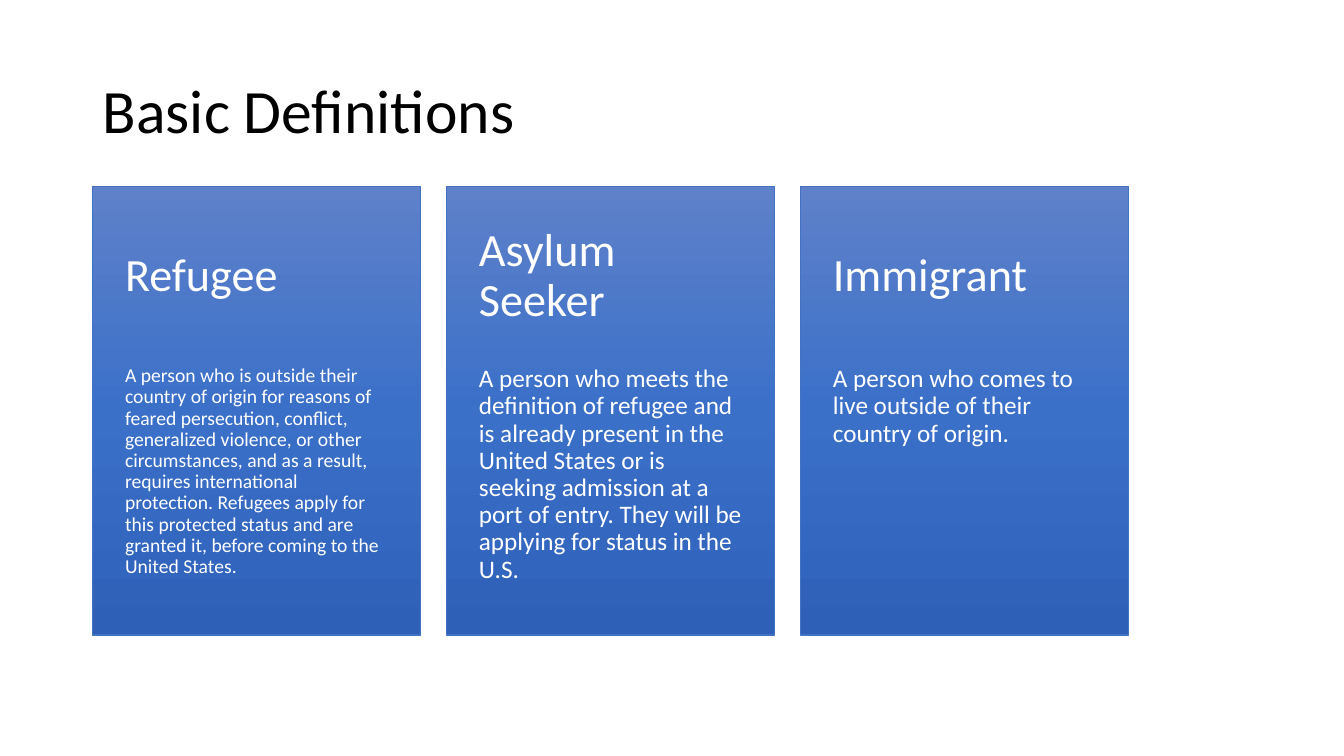
import copy

import pptx
import pptx.dml.color
import pptx.enum.shapes
import pptx.enum.text
import pptx.oxml.ns
import pptx.util

Inches = pptx.util.Inches
Anchor = pptx.enum.text.MSO_ANCHOR
RGB = pptx.dml.color.RGBColor.from_string

THEME = {
    "font": "Calibri",
    "ink": RGB("000000"),
    "card_text": RGB("FFFFFF"),
    "card_line": RGB("4372C3"),
    "card_gradient": [(0, RGB("5E81C9")), (0.5, RGB("3B70C9")), (1, RGB("2E60B8"))],
    "title_size": 44,
    "term_size": 33,
    "meaning_size": 18,
    "long_meaning_size": 14,
}


def write_text(frame, words, size, color, anchor, insets):
    left, top, right, bottom = map(Inches, insets)
    frame_format = {
        "word_wrap": True,
        "auto_size": pptx.enum.text.MSO_AUTO_SIZE.NONE,
        "vertical_anchor": anchor,
        "margin_left": left,
        "margin_top": top,
        "margin_right": right,
        "margin_bottom": bottom,
    }
    for name, value in frame_format.items():
        setattr(frame, name, value)
    frame.text = words
    paragraph = frame.paragraphs[0]
    paragraph.alignment = pptx.enum.text.PP_ALIGN.LEFT
    paragraph.line_spacing = 0.9
    font_format = {"name": THEME["font"], "size": pptx.util.Pt(THEME[size])}
    for name, value in font_format.items():
        setattr(paragraph.runs[0].font, name, value)
    paragraph.runs[0].font.color.rgb = THEME[color]


deck = pptx.Presentation()
deck.slide_width = Inches(13.33)
deck.slide_height = Inches(7.5)
slide = deck.slides.add_slide(deck.slide_layouts[5])

heading = slide.shapes.title
heading_place = {"left": 0.92, "top": 0.4, "width": 11.5, "height": 1.45}
for name, value in heading_place.items():
    setattr(heading, name, Inches(value))
write_text(heading.text_frame, "Basic Definitions", "title_size", "ink",
           Anchor.MIDDLE, (0.1, 0.05, 0.1, 0.05))

CARD_LEFT, CARD_TOP, CARD_WIDTH, CARD_HEIGHT = 0.92, 1.85, 3.25, 4.45
CARD_STEP = 3.51
TERM_HEIGHT = 1.78

definitions = [
    ("Refugee", 1,
     "A person who is outside their country of origin for reasons of feared "
     "persecution, conflict, generalized violence, or other circumstances, and "
     "as a result, requires international protection. Refugees apply for this "
     "protected status and are granted it, before coming to the United States.",
     "long_meaning_size"),
    ("Asylum Seeker", TERM_HEIGHT,
     "A person who meets the definition of refugee and is already present in the "
     "United States or is seeking admission at a port of entry. They will be "
     "applying for status in the U.S.",
     "meaning_size"),
    ("Immigrant", TERM_HEIGHT,
     "A person who comes to live outside of their country of origin.",
     "meaning_size"),
]

for column, (term, term_height, meaning, meaning_size) in enumerate(definitions):
    left = Inches(CARD_LEFT + column * CARD_STEP)
    width = Inches(CARD_WIDTH)

    card = slide.shapes.add_shape(pptx.enum.shapes.MSO_SHAPE.RECTANGLE,
                                  left, Inches(CARD_TOP), width, Inches(CARD_HEIGHT))
    card.shadow.inherit = False
    card.line.color.rgb = THEME["card_line"]
    card.line.width = pptx.util.Pt(0.75)
    card.fill.gradient()
    card.fill.gradient_angle = 270
    first_stop = card.element.spPr.find(".//" + pptx.oxml.ns.qn("a:gs"))
    first_stop.addnext(copy.deepcopy(first_stop))
    for stop, (position, color) in zip(card.fill.gradient_stops, THEME["card_gradient"]):
        stop.position = position
        stop.color.rgb = color

    meaning_top = CARD_TOP + TERM_HEIGHT
    meaning_box = slide.shapes.add_textbox(left, Inches(meaning_top), width,
                                           Inches(CARD_HEIGHT - TERM_HEIGHT))
    write_text(meaning_box.text_frame, meaning, meaning_size, "card_text",
               Anchor.TOP, (0.32, 0, 0.32, 0.36))

    term_top = CARD_TOP + (TERM_HEIGHT - term_height) / 2
    term_box = slide.shapes.add_textbox(left, Inches(term_top), width, Inches(term_height))
    write_text(term_box.text_frame, term, "term_size", "card_text",
               Anchor.MIDDLE, (0.32, 0.18, 0.32, 0.18))

deck.save("out.pptx")
